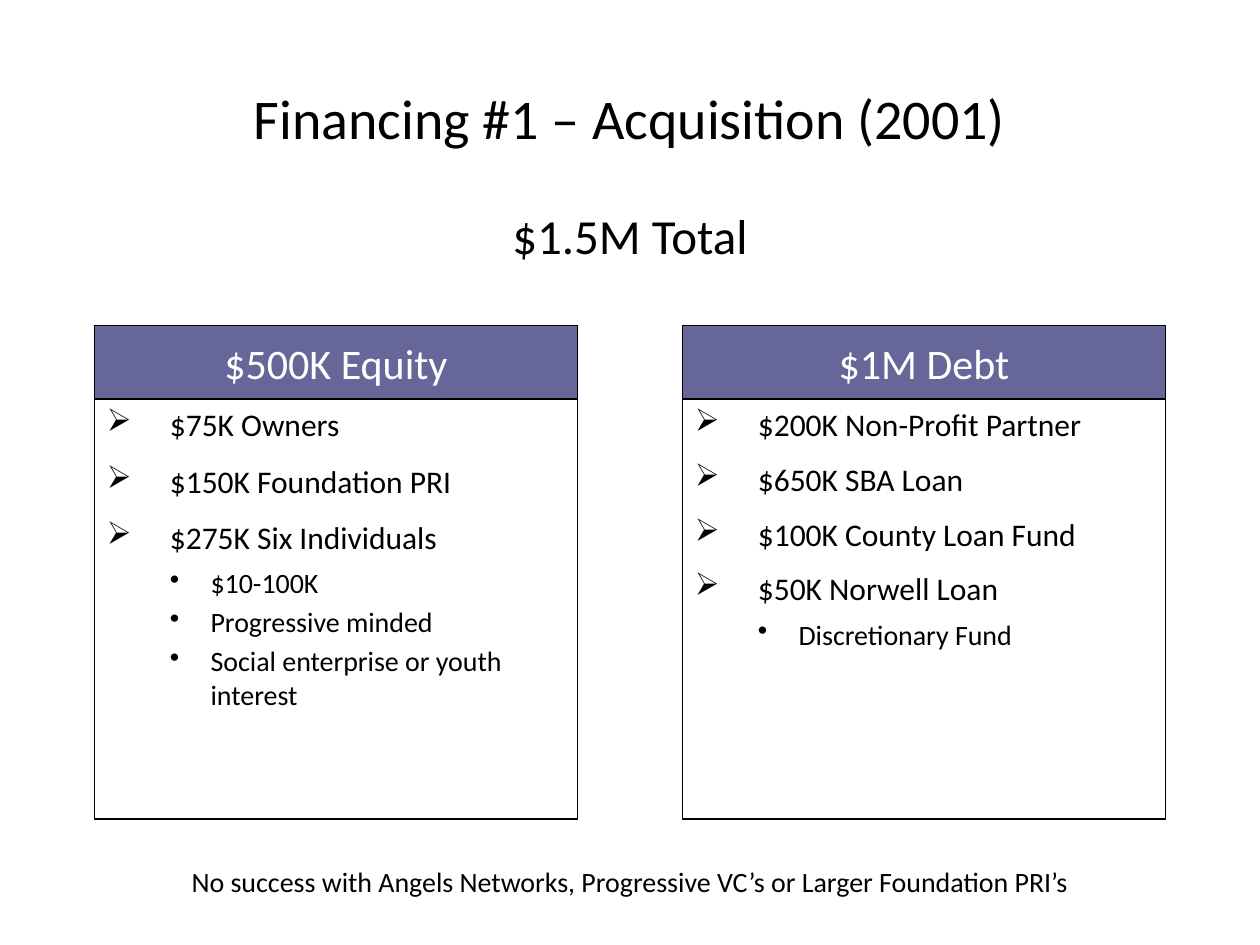
from pptx import Presentation
from pptx import util as u
from pptx.dml.color import RGBColor
from pptx.enum import shapes, text
from pptx.oxml.ns import qn
from lxml import etree

BLACK = RGBColor(0x00, 0x00, 0x00)
WHITE = RGBColor(0xFF, 0xFF, 0xFF)
PURPLE = RGBColor(0x66, 0x66, 0x99)

EMU_PER_PX = 9525  # 96 px to the inch


def px(length):
    return u.Emu(length * EMU_PER_PX)


class SlideBuilder:
    font_name = "Calibri"
    # Per level: bullet, left margin px, hanging indent px, font size pt
    levels = [("➢", 48, 48, 18), ("•", 79, 31, 16)]
    space_after = 2.7
    sub_space_before = 3

    def __init__(self, slide):
        self.slide = slide

    def style(self, paragraph, size, color):
        font = paragraph.font
        font.name = self.font_name
        font.size = u.Pt(size)
        font.color.rgb = color

    def caption(self, words, box, size, anchor=text.MSO_ANCHOR.TOP):
        shape = self.slide.shapes.add_textbox(*map(px, box))
        self.centered_text(shape, words, size, BLACK, anchor)

    def centered_text(self, shape, words, size, color, anchor):
        frame = shape.text_frame
        frame.word_wrap = True
        frame.vertical_anchor = anchor
        frame.text = words
        paragraph = frame.paragraphs[0]
        paragraph.alignment = text.PP_ALIGN.CENTER
        self.style(paragraph, size, color)

    def rectangle(self, box, fill=None):
        shape = self.slide.shapes.add_shape(
            shapes.MSO_SHAPE.RECTANGLE, *map(px, box))
        shape.shadow.inherit = False
        if fill is None:
            shape.fill.background()
        else:
            shape.fill.solid()
            shape.fill.fore_color.rgb = fill
        shape.line.color.rgb = BLACK
        shape.line.width = u.Pt(1)
        return shape

    def header(self, words, box):
        shape = self.rectangle(box, PURPLE)
        self.centered_text(shape, words, 24, WHITE, text.MSO_ANCHOR.MIDDLE)

    def bullet_list(self, items, box, space_before):
        frame = self.rectangle(box).text_frame
        frame.word_wrap = True
        frame.vertical_anchor = text.MSO_ANCHOR.TOP
        frame.text = "\n".join(words for _, words in items)
        for index, (paragraph, (level, _)) in enumerate(zip(frame.paragraphs, items)):
            bullet, margin, hanging, size = self.levels[level]
            paragraph.level = level
            paragraph.alignment = text.PP_ALIGN.LEFT
            if index:
                paragraph.space_before = u.Pt(
                    self.sub_space_before if level else space_before)
            paragraph.space_after = u.Pt(0 if level else self.space_after)
            properties = paragraph._p.get_or_add_pPr()
            properties.set("marL", str(px(margin)))
            properties.set("indent", str(-px(hanging)))
            etree.SubElement(properties, qn("a:buChar"), char=bullet)
            self.style(paragraph, size, BLACK)


def main():
    presentation = Presentation()
    presentation.slide_width = px(960)
    presentation.slide_height = px(720)
    builder = SlideBuilder(
        presentation.slides.add_slide(presentation.slide_layouts[6]))

    # Title and total
    builder.caption("Financing #1 – Acquisition (2001)", (48, 29, 864, 120), 32,
                    text.MSO_ANCHOR.MIDDLE)
    builder.caption("$1.5M Total", (16, 152, 928, 55), 28)

    # Equity and debt panels: heading, space before main items, (level, words)
    panels = [
        ("$500K Equity", 8, [
            (0, "$75K Owners"),
            (0, "$150K Foundation PRI"),
            (0, "$275K Six Individuals"),
            (1, "$10-100K"),
            (1, "Progressive minded"),
            (1, "Social enterprise or youth interest"),
        ]),
        ("$1M Debt", 7, [
            (0, "$200K Non-Profit Partner"),
            (0, "$650K SBA Loan"),
            (0, "$100K County Loan Fund"),
            (0, "$50K Norwell Loan"),
            (1, "Discretionary Fund"),
        ]),
    ]
    left, top, width, gap = 72, 248, 368, 80
    header_height, body_height = 56, 320
    for column, (heading, space_before, items) in enumerate(panels):
        x = left + column * (width + gap)
        builder.header(heading, (x, top, width, header_height))
        builder.bullet_list(
            items, (x, top + header_height, width, body_height), space_before)

    # Closing note
    builder.caption(
        "No success with Angels Networks, Progressive VC’s or Larger Foundation PRI’s",
        (48, 654, 864, 74), 16)

    presentation.save("out.pptx")


if __name__ == "__main__":
    main()
